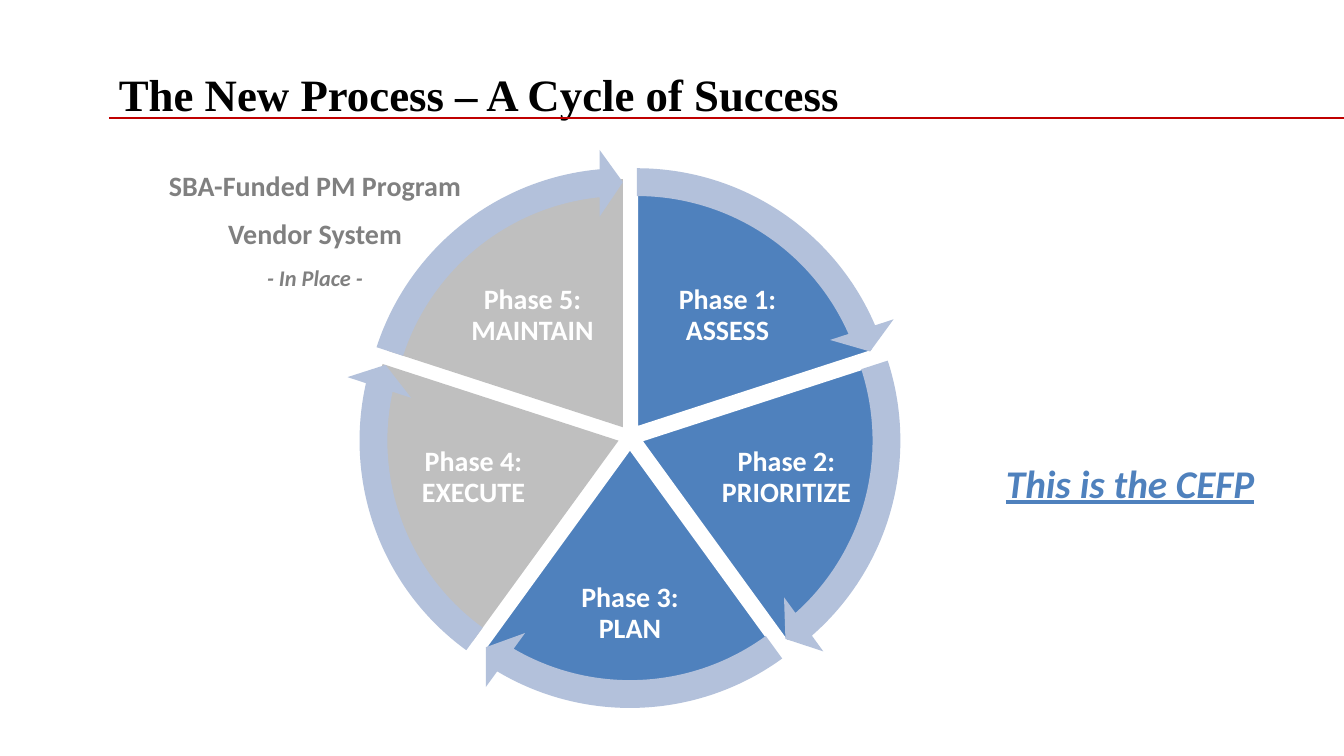
import math

import pptx
import pptx.dml.color
import pptx.enum.shapes
import pptx.enum.text
import pptx.oxml.ns
import pptx.util
from lxml import etree

PX = 12192000 / 1344
COLORS = {"black": "000000", "white": "FFFFFF", "red": "C00000", "blue": "4F81BD",
          "arrow": "B3C1DB", "gray": "808080"}
SHAPES = pptx.enum.shapes.MSO_SHAPE
ALIGN = pptx.enum.text.PP_ALIGN
ANCHOR = pptx.enum.text.MSO_ANCHOR


def color(name):
    return pptx.dml.color.RGBColor.from_string(COLORS[name])


def add_text(box, lines, align=ALIGN.CENTER, anchor=ANCHOR.TOP, inset=None,
             line_spacing=None, before=0):
    """Add a text box; each line is (text, font, size, colour, italic, underline)."""
    tf = s.shapes.add_textbox(*[round(v * PX) for v in box]).text_frame
    tf.word_wrap = True
    tf.vertical_anchor = anchor
    if inset is not None:
        tf.margin_left = tf.margin_right = tf.margin_top = tf.margin_bottom = round(inset * PX)
    for i, (text, font, size, name, italic, underline) in enumerate(lines):
        p = tf.add_paragraph() if i else tf.paragraphs[0]
        p.alignment = align
        p.space_before = pptx.util.Pt(before)
        p.line_spacing = line_spacing
        r = p.add_run()
        r.text = text
        r.font.name = font
        r.font.size = pptx.util.Pt(size)
        r.font.bold = True
        r.font.italic = italic
        r.font.underline = underline
        r.font.color.rgb = color(name)


prs = pptx.Presentation()
prs.slide_width, prs.slide_height = round(1344 * PX), round(756 * PX)
s = prs.slides.add_slide(prs.slide_layouts[6])

# Title and rule
add_text((109, 50, 975, 93),
         [("The New Process – A Cycle of Success", "Times New Roman", 32, "black", False, False)],
         align=ALIGN.LEFT, anchor=ANCHOR.MIDDLE, line_spacing=0.9)
rule = s.shapes.add_connector(pptx.enum.shapes.MSO_CONNECTOR.STRAIGHT,
                              *[round(v * PX) for v in (109, 118, 1344, 118)])
rule.line.color.rgb = color("red")
rule.line.width = pptx.util.Pt(1.5)
etree.SubElement(rule.element.spPr, pptx.oxml.ns.qn("a:effectLst"))

# Cycle: all wedges with labels first, then all arrows
HUB_X, HUB_Y, GAP = 630, 437, 12
PIE, ARROW = 496, 557
DEGREE = 0.6  # one degree in adjustment units
phases = [
    ("Phase 1: ASSESS", (648, 263, 159, 106), True),
    ("Phase 2: PRIORITIZE", (713, 419, 147, 118), True),
    ("Phase 3: PLAN", (559, 549, 142, 130), True),
    ("Phase 4: EXECUTE", (400, 419, 147, 118), False),
    ("Phase 5: MAINTAIN", (453, 263, 159, 106), False),
]
for kind, size in ((SHAPES.PIE, PIE), (SHAPES.CIRCULAR_ARROW, ARROW)):
    for i, (label, box, highlighted) in enumerate(phases):
        start = (270 + 72 * i) % 360
        end = (start + 72) % 360
        middle = math.radians(start + 36)
        x = HUB_X + GAP * math.cos(middle) - size / 2
        y = HUB_Y + GAP * math.sin(middle) - size / 2
        sp = s.shapes.add_shape(kind, *[round(v * PX) for v in (x, y, size, size)])
        sp.shadow.inherit = False
        sp.fill.solid()
        sp.line.fill.background()
        if kind == SHAPES.CIRCULAR_ARROW:
            sp.fill.fore_color.rgb = color("arrow")
            adjustments = (0.05, 3.28, end * DEGREE - 3.28, start * DEGREE, 0.06)
        else:
            sp.fill.fore_color.rgb = color("blue" if highlighted else "black")
            adjustments = (start * DEGREE, end * DEGREE)
            if highlighted:
                sp.line.color.rgb = color("white")
                sp.line.width = pptx.util.Pt(1.5)
            else:
                srgb = sp.element.spPr.find(".//" + pptx.oxml.ns.qn("a:srgbClr"))
                etree.SubElement(srgb, pptx.oxml.ns.qn("a:alpha"), val="25000")
            add_text(box, [(label, "Calibri", 20, "white", False, False)],
                     anchor=ANCHOR.MIDDLE, inset=3, line_spacing=0.9)
        for n, value in enumerate(adjustments):
            sp.adjustments[n] = value

# Side notes
add_text((151, 164, 328, 147), [
    ("SBA-Funded PM Program", "Calibri", 20, "gray", False, False),
    ("Vendor System", "Calibri", 20, "gray", False, False),
    ("- In Place -", "Calibri", 16, "gray", True, False),
], before=10)
add_text((966, 454, 328, 60),
         [("This is the CEFP", "Calibri", 28, "blue", True, True)], before=10)

prs.save("out.pptx")
